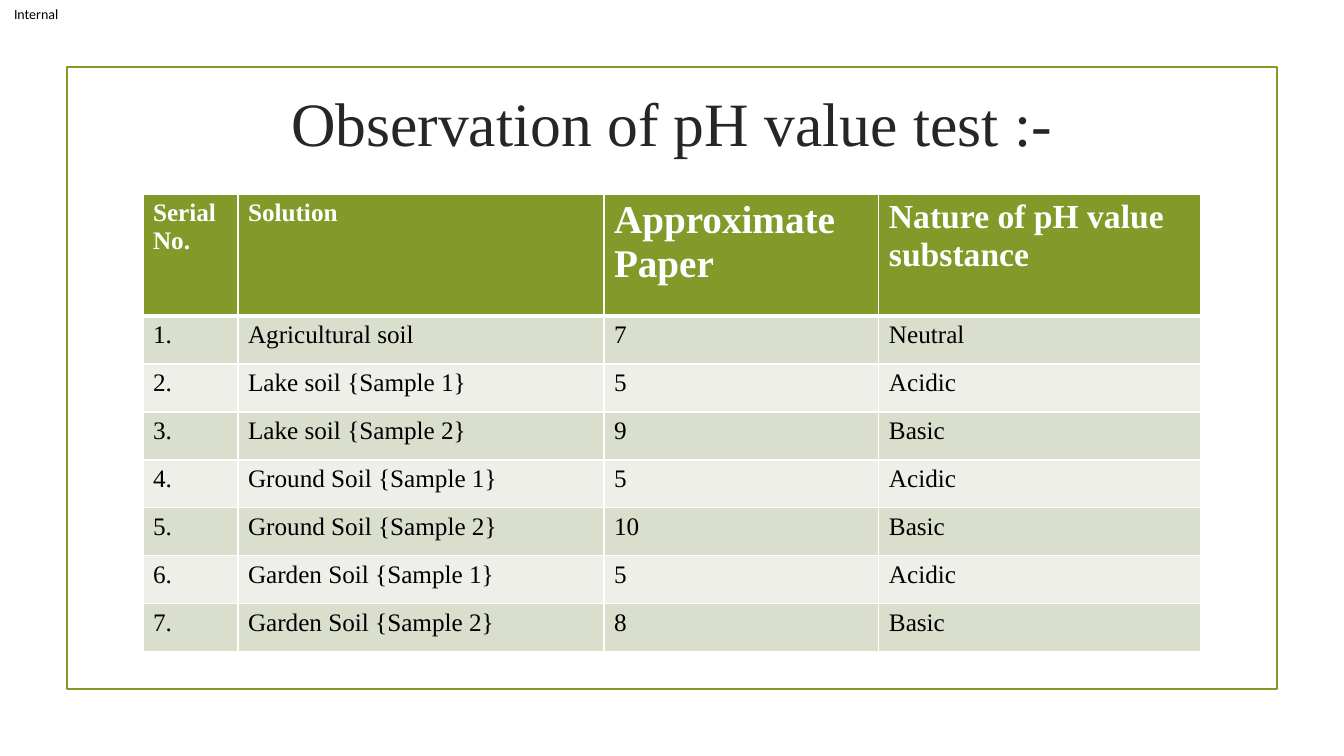
from typing import NamedTuple

import lxml.etree
import pptx
import pptx.dml.color
import pptx.enum.shapes
import pptx.enum.text
import pptx.oxml.ns
import pptx.presentation
import pptx.slide
import pptx.table
import pptx.text.text
import pptx.util

SLIDE_WIDTH, SLIDE_HEIGHT = 1344, 756
EMU_PER_PX = 12192000 / SLIDE_WIDTH

OLIVE = pptx.dml.color.RGBColor(0x83, 0x99, 0x2A)
DARK_BAND = pptx.dml.color.RGBColor(0xD9, 0xDE, 0xCD)
LIGHT_BAND = pptx.dml.color.RGBColor(0xED, 0xEF, 0xE8)
WHITE = pptx.dml.color.RGBColor(0xFF, 0xFF, 0xFF)
BLACK = pptx.dml.color.RGBColor(0x00, 0x00, 0x00)
TITLE_GREY = pptx.dml.color.RGBColor(0x26, 0x26, 0x26)

SERIF = "Times New Roman"
HEADER_HEIGHT, ROW_HEIGHT = 122, 48
BODY_SIZE = 18


class Column(NamedTuple):
    heading: str
    width: int
    heading_size: int


class Observation(NamedTuple):
    solution: str
    ph: int
    nature: str


COLUMNS = [
    Column("Serial No.", 95, 18),
    Column("Solution", 366, 18),
    Column("Approximate Paper", 275, 28),
    Column("Nature of pH value substance", 322, 24),
]
OBSERVATIONS = [
    Observation("Agricultural soil", 7, "Neutral"),
    Observation("Lake soil {Sample 1}", 5, "Acidic"),
    Observation("Lake soil {Sample 2}", 9, "Basic"),
    Observation("Ground Soil {Sample 1}", 5, "Acidic"),
    Observation("Ground Soil {Sample 2}", 10, "Basic"),
    Observation("Garden Soil {Sample 1}", 5, "Acidic"),
    Observation("Garden Soil {Sample 2}", 8, "Basic"),
]


def px(length: int) -> pptx.util.Emu:
    return pptx.util.Emu(round(length * EMU_PER_PX))


def add_run(frame: pptx.text.text.TextFrame, text: str, size: int,
            color: pptx.dml.color.RGBColor, font: str = SERIF,
            bold: bool = False) -> None:
    run = frame.paragraphs[0].add_run()
    run.text = text
    run.font.name = font
    run.font.size = pptx.util.Pt(size)
    run.font.bold = bold
    run.font.color.rgb = color


def add_frame(slide: pptx.slide.Slide) -> None:
    frame = slide.shapes.add_shape(
        pptx.enum.shapes.MSO_SHAPE.RECTANGLE, px(67), px(67), px(1210), px(622))
    frame.shadow.inherit = False
    frame.fill.background()
    frame.line.color.rgb = OLIVE
    frame.line.width = pptx.util.Pt(1.25)


def add_classification(slide: pptx.slide.Slide) -> None:
    label = slide.shapes.add_textbox(0, 0, px(74), px(28)).text_frame
    label.margin_left = px(14)
    label.margin_top = label.margin_right = label.margin_bottom = 0
    label.vertical_anchor = pptx.enum.text.MSO_ANCHOR.MIDDLE
    label.word_wrap = False
    add_run(label, "Internal", 10, BLACK, font="Calibri")


def set_title(slide: pptx.slide.Slide) -> None:
    title = slide.shapes.title
    title.left, title.top, title.width, title.height = px(143), px(50), px(1058), px(144)
    title.text_frame.vertical_anchor = pptx.enum.text.MSO_ANCHOR.MIDDLE
    title.text_frame.paragraphs[0].alignment = pptx.enum.text.PP_ALIGN.CENTER
    add_run(title.text_frame, "Observation of pH value test :-", 44, TITLE_GREY)


def set_borders(cell: pptx.table._Cell, top: int, bottom: int) -> None:
    """Draw white borders, one point wide at the sides."""
    properties = cell._tc.get_or_add_tcPr()
    qn = pptx.oxml.ns.qn
    for side, points in (("L", 1), ("R", 1), ("T", top), ("B", bottom)):
        border = lxml.etree.SubElement(
            properties, qn(f"a:ln{side}"), w=str(pptx.util.Pt(points)))
        fill = lxml.etree.SubElement(border, qn("a:solidFill"))
        lxml.etree.SubElement(fill, qn("a:srgbClr"), val=str(WHITE))


def add_observations(slide: pptx.slide.Slide) -> None:
    width = sum(column.width for column in COLUMNS)
    height = HEADER_HEIGHT + ROW_HEIGHT * len(OBSERVATIONS)
    table = slide.shapes.add_table(
        len(OBSERVATIONS) + 1, len(COLUMNS), px(143), px(194), px(width), px(height)).table
    for table_column, column in zip(table.columns, COLUMNS):
        table_column.width = px(column.width)

    rows = [[column.heading for column in COLUMNS]]
    rows += [[f"{number}.", seen.solution, str(seen.ph), seen.nature]
             for number, seen in enumerate(OBSERVATIONS, start=1)]
    for row_index, texts in enumerate(rows):
        is_header = row_index == 0
        table.rows[row_index].height = px(HEADER_HEIGHT if is_header else ROW_HEIGHT)
        band = OLIVE if is_header else DARK_BAND if row_index % 2 else LIGHT_BAND
        for column_index, text in enumerate(texts):
            cell = table.cell(row_index, column_index)
            set_borders(cell, top=3 if row_index == 1 else 1, bottom=3 if is_header else 1)
            cell.fill.solid()
            cell.fill.fore_color.rgb = band
            size = COLUMNS[column_index].heading_size if is_header else BODY_SIZE
            add_run(cell.text_frame, text, size, WHITE if is_header else BLACK, bold=is_header)


def main() -> None:
    presentation = pptx.Presentation()
    presentation.slide_width = px(SLIDE_WIDTH)
    presentation.slide_height = px(SLIDE_HEIGHT)
    slide = presentation.slides.add_slide(presentation.slide_layouts.get_by_name("Title Only"))
    add_frame(slide)
    add_classification(slide)
    set_title(slide)
    add_observations(slide)
    presentation.save("out.pptx")


if __name__ == "__main__":
    main()
